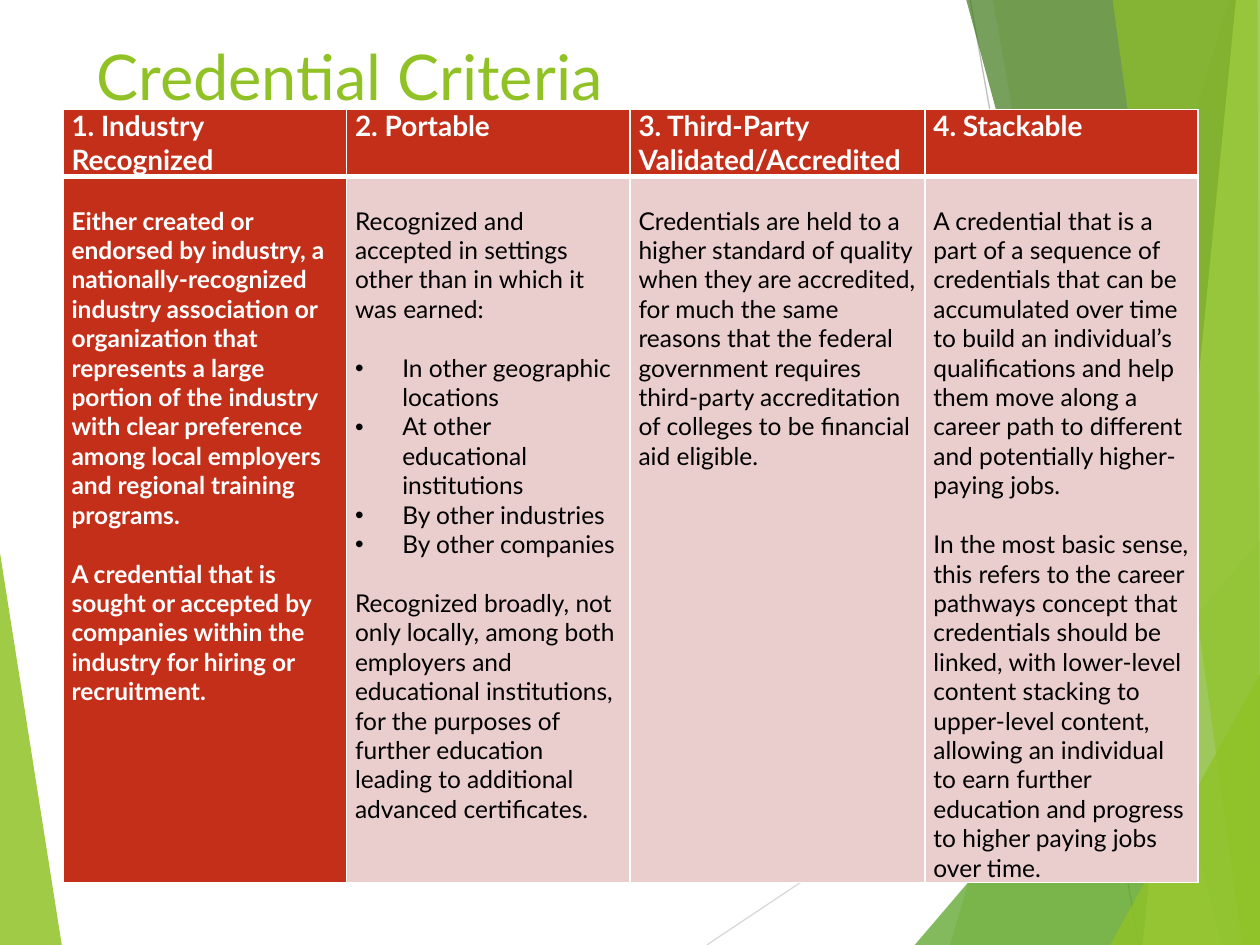
import pptx
import pptx.dml.color
import pptx.enum.shapes
import pptx.enum.text
import pptx.oxml
import pptx.oxml.ns
import pptx.util
from lxml import etree

Pt = pptx.util.Pt
qn = pptx.oxml.ns.qn

FONT = "Lato"
COLORS = {
    "green": "90C226", "grass": "54A021", "forest": "3F7819", "lime": "C0E474",
    "light_gray": "D9D9D9", "gray": "BFBFBF",
    "red": "C42F1A", "pink": "EACDCD", "white": "FFFFFF", "black": "000000",
}
LINE_HEIGHT = 16.8  # one line of 14 pt text

# Outline in points, colour, opacity in percent
FACETS = [
    ([(0, 316), (35.3, 540), (0, 540)], "green", 85),
    ([(702, 0), (542.9, 540), (720, 540), (720, 0)], "green", 30),
    ([(567.4, 0), (661.7, 540), (720, 540), (720, 0)], "green", 20),
    ([(522.7, 540), (720, 309), (720, 540)], "grass", 72),
    ([(552.2, 0), (698.4, 540), (720, 540), (720, 0)], "forest", 70),
    ([(706.3, 0), (653, 540), (720, 540), (720, 0)], "lime", 70),
    ([(635.8, 0), (710, 540), (720, 540), (718.6, 0)], "green", 65),
    ([(634.3, 540), (720, 385.2), (720, 540)], "green", 80),
]
RAYS = [((403.9, 540), (720, 329), "light_gray"), ((554.4, 0), (650.9, 540), "gray")]

COLUMN_WIDTHS = [162, 162, 168.5, 156]
HEADINGS = ["1. Industry Recognized", "2. Portable",
            "3. Third-Party Validated/Accredited", "4. Stackable"]
# Paragraphs of each criterion; a leading "• " marks a list item
DESCRIPTIONS = [
    ["Either created or endorsed by industry, a nationally-recognized industry "
     "association or organization that represents a large portion of the industry "
     "with clear preference among local employers and regional training programs.",
     "A credential that is sought or accepted by companies within the industry "
     "for hiring or recruitment."],
    ["Recognized and accepted in settings other than in which it was earned:",
     "• In other geographic locations",
     "• At other educational institutions",
     "• By other industries",
     "• By other companies",
     "Recognized broadly, not only locally, among both employers and educational "
     "institutions, for the purposes of further education leading to additional "
     "advanced certificates."],
    ["Credentials are held to a higher standard of quality when they are accredited, "
     "for much the same reasons that the federal government requires third-party "
     "accreditation of colleges to be financial aid eligible."],
    ["A credential that is a part of a sequence of credentials that can be "
     "accumulated over time to build an individual’s qualifications and help them "
     "move along a career path to different and potentially higher-paying jobs.",
     "In the most basic sense, this refers to the career pathways concept that "
     "credentials should be linked, with lower-level content stacking to upper-level "
     "content, allowing an individual to earn further education and progress to "
     "higher paying jobs over time."],
]


def rgb(name):
    return pptx.dml.color.RGBColor.from_string(COLORS[name])


def set_attributes(target, values):
    for name, value in values.items():
        setattr(target, name, value)


def format_font(font, size, color, bold=False):
    set_attributes(font, {"name": FONT, "size": Pt(size), "bold": bold})
    font.color.rgb = rgb(color)


def add_facet(slide, points, color, opacity):
    """Draw a translucent straight-edged polygon."""
    corners = [(Pt(x), Pt(y)) for x, y in points]
    builder = slide.shapes.build_freeform(*corners[0], scale=1.0)
    builder.add_line_segments(corners[1:], close=True)
    shape = builder.convert_to_shape()
    shape.shadow.inherit = False
    shape.line.fill.background()
    shape.fill.solid()
    shape.fill.fore_color.rgb = rgb(color)
    color_element = shape._element.spPr.find(".//" + qn("a:srgbClr"))
    etree.SubElement(color_element, qn("a:alpha"), val=str(opacity * 1000))


def add_ray(slide, start, end, color):
    connector = slide.shapes.add_connector(
        pptx.enum.shapes.MSO_CONNECTOR.STRAIGHT, *[Pt(value) for value in start + end])
    connector.line.width = Pt(0.75)
    connector.line.color.rgb = rgb(color)
    etree.SubElement(connector._element.spPr, qn("a:effectLst"))


def set_title(slide, text):
    title = slide.shapes.title
    set_attributes(title, {"left": Pt(48), "top": Pt(18),
                           "width": Pt(500), "height": Pt(54)})
    frame = title.text_frame
    set_attributes(frame, {"text": text, "word_wrap": True,
                           "vertical_anchor": pptx.enum.text.MSO_ANCHOR.TOP})
    paragraph = frame.paragraphs[0]
    paragraph.alignment = pptx.enum.text.PP_ALIGN.LEFT
    format_font(paragraph.runs[0].font, 36, "green")


def style_cell(cell, fill, top_border, bottom_border, top_margin=0):
    properties = cell._tc.get_or_add_tcPr()
    for tag, width in (("lnL", 1), ("lnR", 1), ("lnT", top_border), ("lnB", bottom_border)):
        line = etree.SubElement(properties, qn("a:" + tag), w=str(Pt(width)))
        solid = etree.SubElement(line, qn("a:solidFill"))
        etree.SubElement(solid, qn("a:srgbClr"), val=COLORS["white"])
    cell.fill.solid()
    cell.fill.fore_color.rgb = rgb(fill)
    set_attributes(cell, {"margin_left": Pt(4.9), "margin_right": Pt(4.9),
                          "margin_top": Pt(top_margin), "margin_bottom": 0})


def make_bullet(paragraph):
    properties = paragraph._p.get_or_add_pPr()
    properties.set("marL", str(Pt(27)))
    properties.set("indent", str(Pt(-27)))
    etree.SubElement(properties, qn("a:buFont"), typeface="Arial")
    etree.SubElement(properties, qn("a:buChar"), char="•")


def write_cell(cell, texts, size, color, bold):
    """Write paragraphs one line apart, keeping list items together."""
    frame = cell.text_frame
    previous_is_item = False
    for index, text in enumerate(texts):
        is_item = text.startswith("• ")
        paragraph = frame.add_paragraph() if index else frame.paragraphs[0]
        if index and not (is_item and previous_is_item):
            paragraph.space_before = Pt(LINE_HEIGHT)
        if is_item:
            make_bullet(paragraph)
        run = paragraph.add_run()
        run.text = text.removeprefix("• ")
        format_font(run.font, size, color, bold)
        previous_is_item = is_item


def add_criteria_table(slide):
    heights = [38.4, 24 * LINE_HEIGHT]
    table = slide.shapes.add_table(
        2, len(HEADINGS), Pt(36), Pt(62.5),
        Pt(sum(COLUMN_WIDTHS)), Pt(sum(heights))).table
    table.horz_banding = False
    for row, height in zip(table.rows, heights):
        row.height = Pt(height)
    for index, width in enumerate(COLUMN_WIDTHS):
        table.columns[index].width = Pt(width)
        heading, description = table.cell(0, index), table.cell(1, index)
        style_cell(heading, "red", 1, 3)
        write_cell(heading, [HEADINGS[index]], 16, "white", True)
        first = index == 0
        style_cell(description, "red" if first else "pink", 3, 1, LINE_HEIGHT)
        write_cell(description, DESCRIPTIONS[index], 14,
                   "white" if first else "black", first)


def main():
    presentation = pptx.Presentation()
    set_attributes(presentation, {"slide_width": Pt(720), "slide_height": Pt(540)})
    slide = presentation.slides.add_slide(presentation.slide_layouts[5])
    add_facet(slide, *FACETS[0])
    for ray in RAYS:
        add_ray(slide, *ray)
    for facet in FACETS[1:]:
        add_facet(slide, *facet)
    set_title(slide, "Credential Criteria")
    add_criteria_table(slide)
    presentation.save("out.pptx")


if __name__ == "__main__":
    main()
